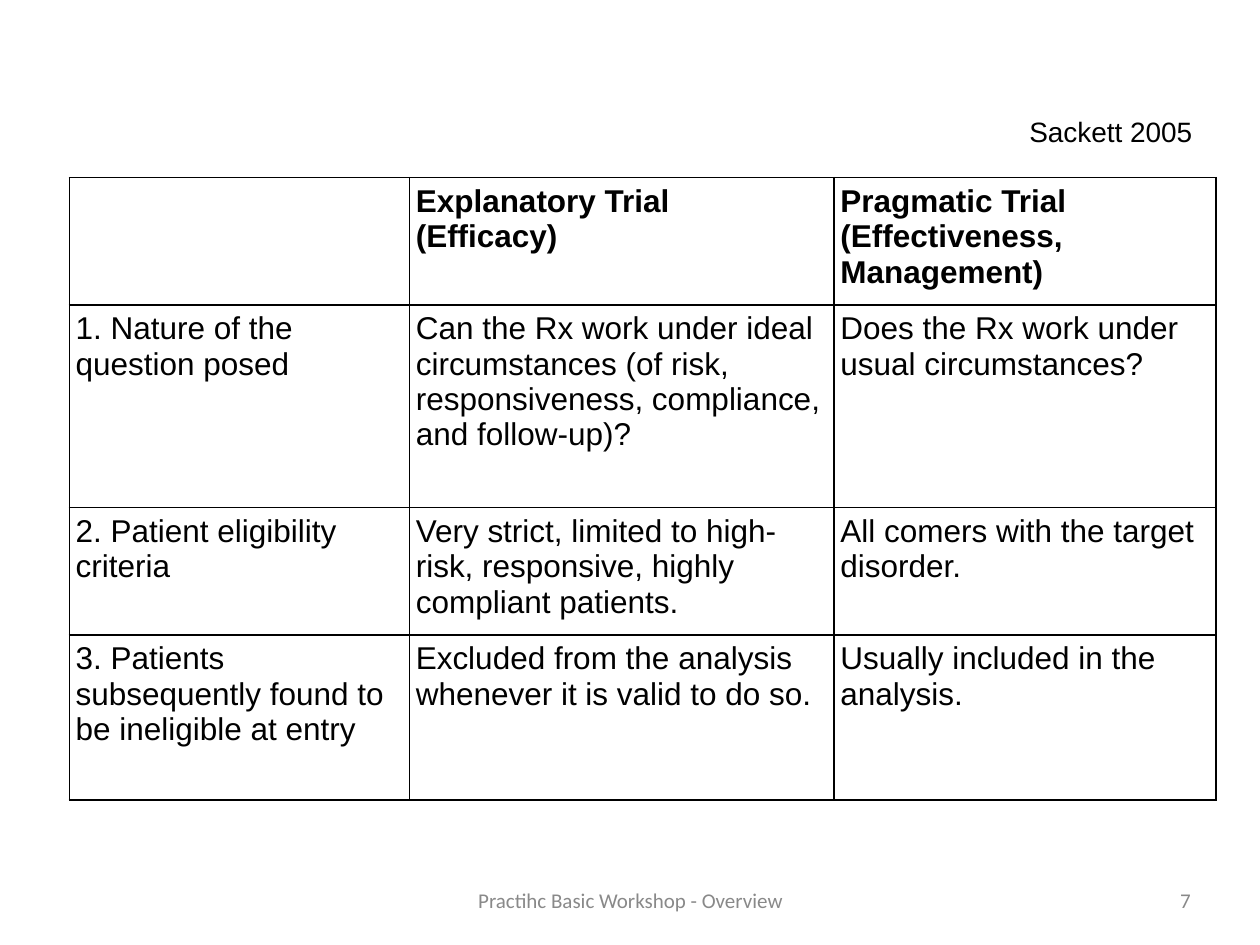
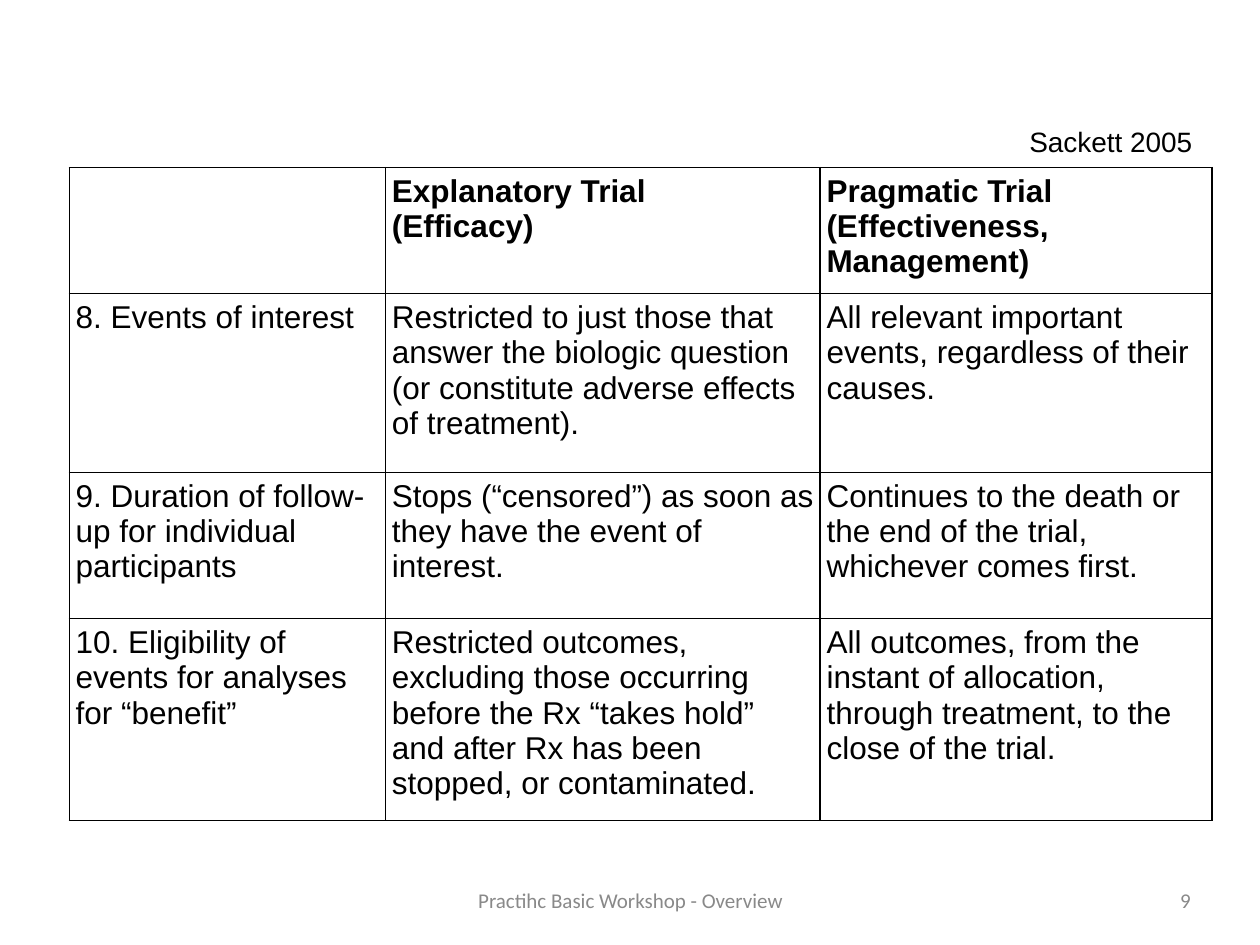
from lxml.etree import SubElement
from pptx import Presentation
from pptx.dml.color import RGBColor
from pptx.enum.text import MSO_ANCHOR, PP_ALIGN
from pptx.oxml.ns import qn
from pptx.util import Inches, Pt

BLACK, GREY = "000000", "898989"
BODY = {"name": "Arial", "size": Pt(18), "bold": False}
HEAD = {**BODY, "bold": True}
NOTE = {"name": "Arial", "size": Pt(16)}
FOOT = {"name": "Calibri", "size": Pt(12)}
INSETS = ("margin_left", "margin_top", "margin_right", "margin_bottom")
TITLES = ("", "Explanatory Trial\n(Efficacy)",
          "Pragmatic Trial (Effectiveness, Management)")

PAGES = [
    {"num": 7, "top": 1.41, "cite": 0.86,
     "cols": (2.7, 3.37, 3.03), "rows": (1.01, 1.61, 1.01, 1.31),
     "body": [
         ("1. Nature of the question posed",
          "Can the Rx work under ideal circumstances (of risk, "
          "responsiveness, compliance, and follow-up)?",
          "Does the Rx work under usual circumstances?"),
         ("2. Patient eligibility criteria",
          "Very strict, limited to high-risk, responsive, highly "
          "compliant patients.",
          "All comers with the target disorder."),
         ("3. Patients subsequently found to be ineligible at entry",
          "Excluded from the analysis whenever it is valid to do so.",
          "Usually included in the analysis.")]},
    {"num": 9, "top": 1.33, "cite": 0.94,
     "cols": (2.51, 3.45, 3.11), "rows": (1, 1.42, 1.16, 1.6),
     "body": [
         ("8. Events of interest",
          "Restricted to just those that answer the biologic question "
          "(or constitute adverse effects of treatment).",
          "All relevant important events, regardless of their causes."),
         ("9. Duration of follow-up for individual participants",
          "Stops (“censored”) as soon as they have the event of interest.",
          "Continues to the death or the end of the trial, whichever "
          "comes first."),
         ("10. Eligibility of events for analyses for “benefit”",
          "Restricted outcomes, excluding those occurring before the Rx "
          "“takes hold” and after Rx has been stopped, or contaminated.",
          "All outcomes, from the instant of allocation, through "
          "treatment, to the close of the trial.")]},
]


def paint(font, color):
    font.color.rgb = RGBColor.from_string(color)


class Deck:
    """Holds the shared style and the current slide."""

    def __init__(self):
        self.prs = Presentation()
        self.prs.slide_width, self.prs.slide_height = Inches(10), Inches(7.5)
        self.slide = None

    def page(self):
        self.slide = self.prs.slides.add_slide(self.prs.slide_layouts[6])

    def fill(self, frame, text, style, color, align=PP_ALIGN.LEFT):
        frame.text = text
        for para in frame.paragraphs:
            para.alignment = align
            for key, value in style.items():
                setattr(para.font, key, value)
            paint(para.font, color)

    def inset(self, item):
        for side in INSETS:
            setattr(item, side, Inches(0.05))

    def text(self, text, box, style, color, align=PP_ALIGN.LEFT,
             anchor=MSO_ANCHOR.TOP):
        frame = self.slide.shapes.add_textbox(*map(Inches, box)).text_frame
        frame.word_wrap = True
        frame.vertical_anchor = anchor
        self.inset(frame)
        self.fill(frame, text, style, color, align)

    def border(self, cell):
        props = cell._tc.get_or_add_tcPr()
        for side in ("a:lnL", "a:lnR", "a:lnT", "a:lnB"):
            line = SubElement(props, qn(side), w=str(Pt(1)))
            ink = SubElement(line, qn("a:solidFill"))
            SubElement(ink, qn("a:srgbClr"), val=BLACK)

    def table(self, data, top, cols, rows):
        box = map(Inches, (0.55, top, sum(cols), sum(rows)))
        table = self.slide.shapes.add_table(len(rows), len(cols), *box).table
        table.first_row = table.horz_banding = False
        for col, width in zip(table.columns, cols):
            col.width = Inches(width)
        for r, (row, height) in enumerate(zip(table.rows, rows)):
            row.height = Inches(height)
            for cell, text in zip(row.cells, data[r]):
                self.inset(cell)
                self.border(cell)
                cell.fill.background()
                self.fill(cell.text_frame, text, BODY if r else HEAD, BLACK)

    def footer(self, num):
        self.text("Practihc Basic Workshop - Overview", (3.42, 7, 3.17, 0.29),
                  FOOT, GREY, PP_ALIGN.CENTER, MSO_ANCHOR.MIDDLE)
        self.text(str(num), (9.22, 7, 0.28, 0.29),
                  FOOT, GREY, PP_ALIGN.RIGHT, MSO_ANCHOR.MIDDLE)


def main():
    deck = Deck()
    for page in PAGES:
        deck.page()
        deck.table([TITLES, *page["body"]], page["top"], page["cols"],
                   page["rows"])
        deck.text("Sackett 2005", (8.12, page["cite"], 1.5, 0.34), NOTE, BLACK)
        deck.footer(page["num"])
    deck.prs.save("out.pptx")


if __name__ == "__main__":
    main()
